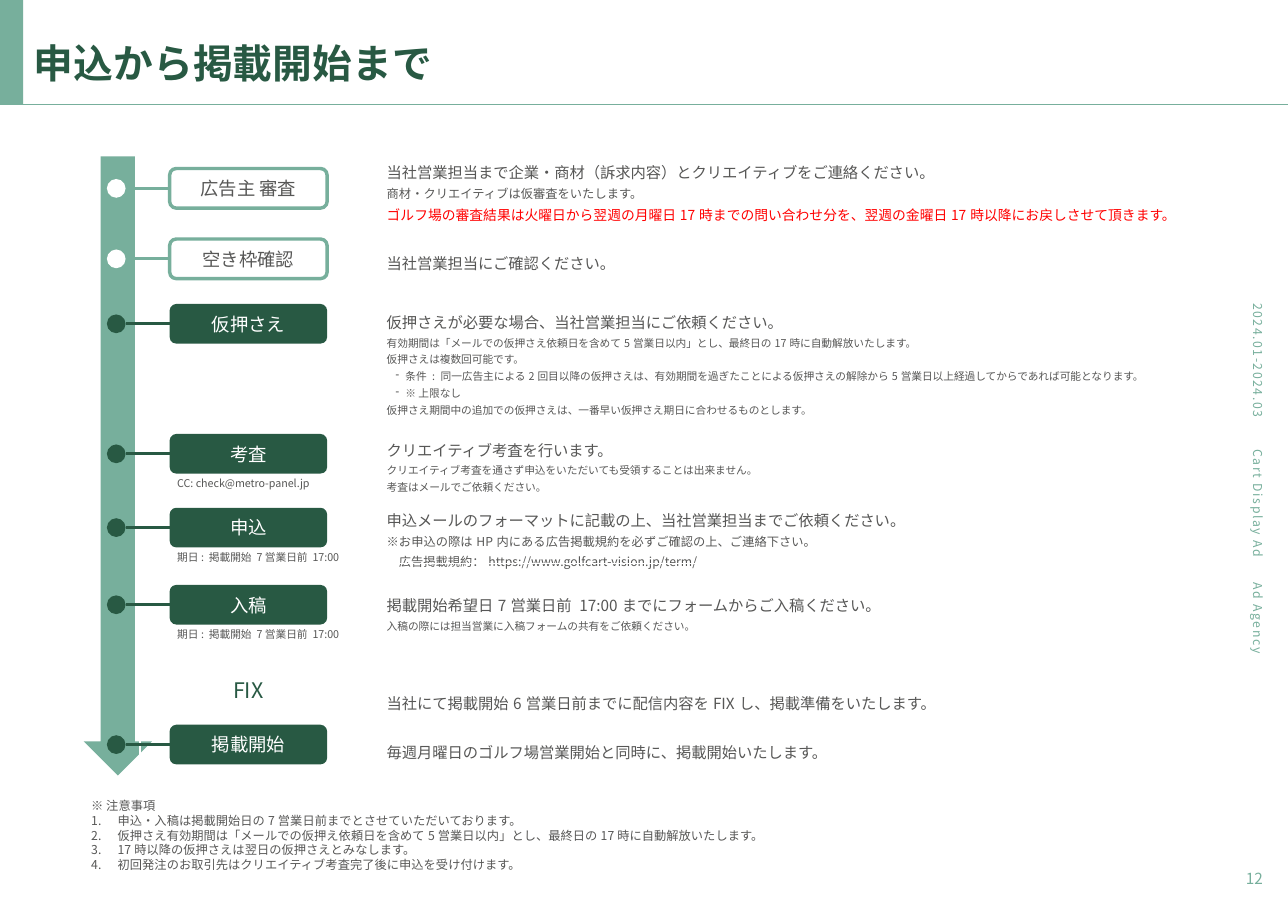
from lxml import etree
from pptx import Presentation
from pptx import util as u
from pptx.dml.color import RGBColor
from pptx.enum import shapes, text
from pptx.oxml import ns

THEME = {
    "font": "Noto Sans CJK JP",
    "dark": "285943", "light": "77AF9C", "grey": "575756", "white": "FFFFFF", "red": "FF0000",
    "title": 26, "fix": 14, "step": 12, "lead": 10, "alert": 9, "note": 8, "small": 7,
}
W, H = 11.69, 8.27
LEFT, CENTER, RIGHT = text.PP_ALIGN.LEFT, text.PP_ALIGN.CENTER, text.PP_ALIGN.RIGHT

prs = Presentation()
prs.slide_width, prs.slide_height = u.Inches(W), u.Inches(H)
s = prs.slides.add_slide(prs.slide_layouts[6])


def grid(x, y, w=0, h=0):
    """Percent of the slide's width and height to lengths."""
    return [u.Inches(v * side / 100) for v, side in zip((x, y, w, h), (W, H, W, H))]


def write(tf, lines, al=LEFT, spacing=None, **fmt):
    """Lines are (text, size, colour[, (bullet tag, attributes, margin, indent)])."""
    tf.word_wrap = True
    for i, (words, size, colour, *bullet) in enumerate(lines):
        p = tf.add_paragraph() if i else tf.paragraphs[0]
        p.alignment = al
        if spacing:
            p.line_spacing = spacing
        for tag, attrs, margin, indent in bullet:
            pPr = p._p.get_or_add_pPr()
            pPr.set("marL", str(u.Inches(margin)))
            pPr.set("indent", str(u.Inches(indent)))
            etree.SubElement(pPr, ns.qn(tag), attrs)
        r = p.add_run()
        r.text = words
        for name, value in {"size": u.Pt(THEME[size]), "name": THEME["font"], **fmt}.items():
            setattr(r.font, name, value)
        r.font.color.rgb = RGBColor.from_string(THEME[colour])
        etree.SubElement(r._r.get_or_add_rPr(), ns.qn("a:ea"), typeface=THEME["font"])


# Header bar, rule and title; flow arrow
for kind, place in ((shapes.MSO_SHAPE.RECTANGLE, (0, 0, 1.8, 11.49)),
                    (shapes.MSO_SHAPE.DOWN_ARROW, (6.5, 17.17, 5.3, 67.96))):
    sp = s.shapes.add_shape(kind, *grid(*place))
    sp.shadow.inherit = False
    sp.fill.solid()
    sp.fill.fore_color.rgb = RGBColor.from_string(THEME["light"])
    sp.line.fill.background()

x1, y1, x2, _ = grid(0, 11.49, 100)
rule = s.shapes.add_connector(shapes.MSO_CONNECTOR.STRAIGHT, x1, y1, x2, y1)
rule.line.width = u.Pt(0.5)
rule.line.color.rgb = RGBColor.from_string(THEME["light"])
etree.SubElement(rule._element.spPr, ns.qn("a:effectLst"))

tf = s.shapes.add_textbox(*grid(1.8, 2.9, 98.2, 8.59)).text_frame
tf.vertical_anchor = text.MSO_ANCHOR.MIDDLE
write(tf, [("申込から掲載開始まで", "title", "dark")], spacing=0.9, bold=True)

# Side labels and page number
for words, y in (("2024.01-2024.03", 38.09), ("Cart Display Ad", 53.81), ("Ad Agency", 66.38)):
    sp = s.shapes.add_textbox(*grid(91.53, y, 12.23, 2.9))
    sp.rotation = 90
    write(sp.text_frame, [(words, "note", "light")], CENTER)
    sp.text_frame.paragraphs[0].runs[0]._r.get_or_add_rPr().set("spc", "100")
tf = s.shapes.add_textbox(*grid(76.39, 94.8, 22.5, 5.2)).text_frame
write(tf, [("12", "lead", "light")], RIGHT)

# Explanations: row height in percent, top inset in inches, lines
DASH = ("a:buChar", {"char": "-"}, 0.17, -0.09)
INDENT = ("a:buNone", {}, 0.11, 0)
rows = [
    (7.86, 0.04, [
        ("当社営業担当まで企業・商材（訴求内容）とクリエイティブをご連絡ください。", "lead", "grey"),
        ("商材・クリエイティブは仮審査をいたします。", "note", "grey"),
        ("ゴルフ場の審査結果は火曜日から翌週の月曜日17時までの問い合わせ分を、翌週の金曜日17時以降にお戻しさせて頂きます。",
         "alert", "red")]),
    (7.86, 0.04, [("当社営業担当にご確認ください。", "lead", "grey")]),
    (14.51, 0.04, [
        ("仮押さえが必要な場合、当社営業担当にご依頼ください。", "lead", "grey"),
        ("有効期間は「メールでの仮押さえ依頼日を含めて5営業日以内」とし、最終日の17時に自動解放いたします。", "small", "grey"),
        ("仮押さえは複数回可能です。", "small", "grey"),
        ("条件 : 同一広告主による2回目以降の仮押さえは、有効期間を過ぎたことによる仮押さえの解除から"
         "5営業日以上経過してからであれば可能となります。", "small", "grey", DASH),
        ("※ 上限なし", "small", "grey", DASH),
        ("仮押さえ期間中の追加での仮押さえは、一番早い仮押さえ期日に合わせるものとします。", "small", "grey")]),
    (7.98, 0.04, [
        ("クリエイティブ考査を行います。", "lead", "grey"),
        ("クリエイティブ考査を通さず申込をいただいても受領することは出来ません。", "small", "grey"),
        ("考査はメールでご依頼ください。", "small", "grey")]),
    (6.65, 0.04, [
        ("申込メールのフォーマットに記載の上、当社営業担当までご依頼ください。", "lead", "grey"),
        ("※お申込の際はHP内にある広告掲載規約を必ずご確認の上、ご連絡下さい。", "note", "grey"),
        ("広告掲載規約：https://www.golfcart-vision.jp/term/", "note", "grey", INDENT)]),
    (8.1, 0.26, [
        ("掲載開始希望日7営業日前 17:00までにフォームからご入稿ください。", "lead", "grey"),
        ("入稿の際には担当営業に入稿フォームの共有をご依頼ください。", "small", "grey")]),
    (8.34, 0.48, [("当社にて掲載開始6営業日前までに配信内容をFIXし、掲載準備をいたします。", "lead", "grey")]),
    (7.86, 0.04, [("毎週月曜日のゴルフ場営業開始と同時に、掲載開始いたします。", "lead", "grey")]),
]
place = grid(10.86, 16.93, 82.12, sum(row[0] for row in rows))
table = s.shapes.add_table(len(rows), 2, *place).table
table.first_row = table.horz_banding = False
for col, width in zip(table.columns, (18.48, 63.64)):
    col.width = grid(width, 0)[0]
for row, (height, inset, lines) in zip(table.rows, rows):
    row.height = grid(0, height)[1]
    for cell in row.cells:
        cell.fill.background()
    cell = row.cells[1]
    cell.vertical_anchor = text.MSO_ANCHOR.MIDDLE
    for side, margin in {"left": 0.08, "right": 0.08, "top": inset, "bottom": 0.04}.items():
        setattr(cell, f"margin_{side}", u.Inches(margin))
    write(cell.text_frame, lines, spacing=1.1)

# Steps: label, top, style, caption
STYLES = {  # fill, outline, text, size, dot, link
    "open": ("white", "light", "grey", "step", "white", "light"),
    "solid": ("dark", None, "white", "step", "dark", "dark"),
    "plain": ("white", None, "dark", "fix", None, None),
}
DEADLINE = "期日: 掲載開始 7営業日前 17:00"
steps = [
    ("広告主 審査", 18.5, "open", None),
    ("空き枠確認", 26.24, "open", None),
    ("仮押さえ", 33.37, "solid", None),
    ("考査", 47.64, "solid", "CC: check@metro-panel.jp"),
    ("申込", 55.74, "solid", DEADLINE),
    ("入稿", 64.21, "solid", DEADLINE),
    ("FIX", 73.52, "plain", None),
    ("掲載開始", 79.56, "solid", None),
]
BOX_H, DOT_X, DOT_W, DOT_H = 4.35, 8.3, 1.45, 2.06
for label, y, style, caption in steps:
    fill, outline, ink, size, dot_fill, link = STYLES[style]
    box = s.shapes.add_shape(shapes.MSO_SHAPE.ROUNDED_RECTANGLE, *grid(13.17, y, 12.23, BOX_H))
    parts = [(box, fill)]
    mid = y + BOX_H / 2
    if dot_fill:
        dot = s.shapes.add_shape(shapes.MSO_SHAPE.OVAL, *grid(DOT_X, mid - DOT_H / 2, DOT_W, DOT_H))
        parts.append((dot, dot_fill))
    for sp, colour in parts:
        sp.shadow.inherit = False
        sp.fill.solid()
        sp.fill.fore_color.rgb = RGBColor.from_string(THEME[colour])
        sp.line.fill.background()
    if outline:
        box.line.color.rgb = RGBColor.from_string(THEME[outline])
        box.line.width = u.Pt(2.25)
    box.text_frame.vertical_anchor = text.MSO_ANCHOR.MIDDLE
    write(box.text_frame, [(label, size, ink)], CENTER)
    if link:
        x1, y1, *_ = grid(DOT_X + DOT_W, mid)
        line = s.shapes.add_connector(shapes.MSO_CONNECTOR.STRAIGHT, x1, y1, box.left, y1)
        line.end_connect(box, 1)
        line.line.width = u.Pt(2)
        line.line.color.rgb = RGBColor.from_string(THEME[link])
        etree.SubElement(line._element.spPr, ns.qn("a:effectLst"))
    if caption:
        tf = s.shapes.add_textbox(*grid(12.92, y + 4.11, 14.54, 2.66)).text_frame
        write(tf, [(caption, "small", "grey")])

# Numbered notes
NUMBER = ("a:buAutoNum", {"type": "arabicPeriod"}, 0.24, -0.24)
notes = [
    "申込・入稿は掲載開始日の7営業日前までとさせていただいております。",
    "仮押さえ有効期間は「メールでの仮押え依頼日を含めて5営業日以内」とし、最終日の17時に自動解放いたします。",
    "17時以降の仮押さえは翌日の仮押さえとみなします。",
    "初回発注のお取引先はクリエイティブ考査完了後に申込を受け付けます。",
]
tf = s.shapes.add_textbox(*grid(6.24, 87.06, 87.6, 9.31)).text_frame
write(tf, [("※ 注意事項", "note", "grey")] + [(n, "note", "grey", NUMBER) for n in notes])

prs.save("out.pptx")
